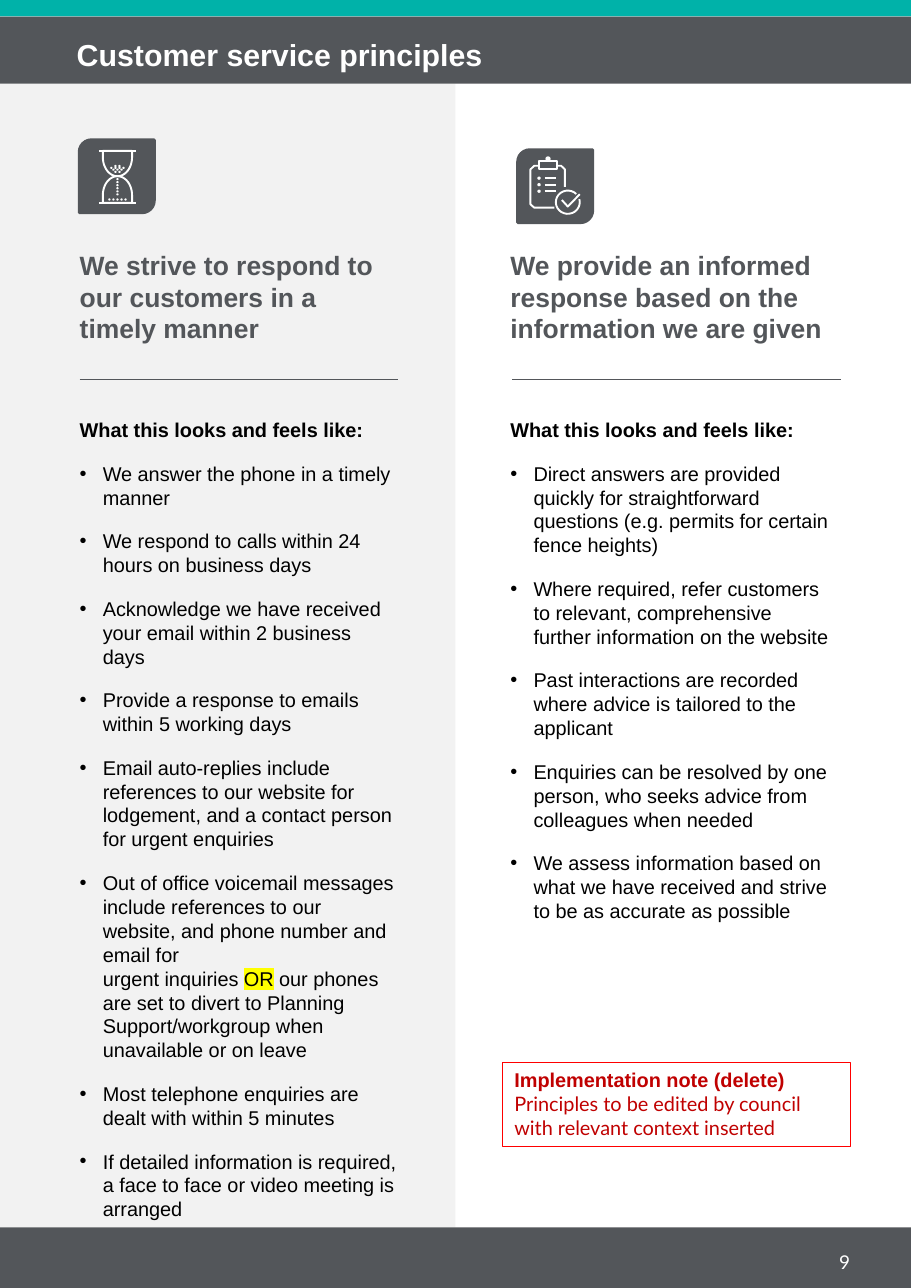
import math

import lxml.etree
import pptx
import pptx.dml.color
import pptx.enum.shapes
import pptx.enum.text
import pptx.oxml.ns
import pptx.util

SHAPE = pptx.enum.shapes.MSO_SHAPE
ALIGN = pptx.enum.text.PP_ALIGN
ANCHOR = pptx.enum.text.MSO_ANCHOR
COLOURS = {"slate": "53565A", "teal": "00B2A9", "pale": "F2F2F2", "white": "FFFFFF",
           "black": "000000", "red": "FF0000", "crimson": "C00000", "yellow": "FFFF00"}
FONTS = {
    "title": {"size": 19.8, "name": "Arial", "bold": True, "color": "white"},
    "heading": {"size": 17.3, "name": "Arial", "bold": True, "color": "slate"},
    "lead": {"size": 13, "name": "Arial", "bold": True, "color": "black"},
    "item": {"size": 13, "name": "Arial", "bold": False, "color": "black"},
    "note title": {"size": 13, "name": "Arial", "bold": True, "color": "crimson"},
    "note": {"size": 13, "name": "Lato", "bold": False, "color": "crimson"},
    "number": {"size": 12.4, "name": "Lato", "bold": False, "color": "white"},
}
HARD_SPACE = chr(160)
LEAD = "What this looks and feels like:"
TIMELY = [
    "We answer the phone in a timely manner",
    "We respond to calls within 24 hours on business days",
    "Acknowledge we have received your email within 2 business days",
    "Provide a response to emails within 5 working days",
    "Email auto-replies include references to our website for lodgement, and a contact person "
    "for urgent enquiries",
    "Out of office voicemail messages include references to our website, and phone number and "
    "email for urgent~inquiries~|OR|~our~phones are set to divert to~Planning "
    "Support/workgroup~when unavailable or on leave",
    "Most telephone enquiries are dealt with within 5 minutes",
    "If detailed information is required, a face to face or video meeting is arranged",
]
INFORMED = [
    "Direct answers are provided quickly for straightforward questions (e.g. permits for "
    "certain fence heights)",
    "Where required, refer customers to relevant, comprehensive further information on the website",
    "Past interactions are recorded where advice is tailored to the applicant",
    "Enquiries can be resolved by one person, who seeks advice from colleagues when needed",
    "We assess information based on what we have received and strive to be as accurate as possible",
]


def within(box, x, y, width=0, height=0):
    left, top, full_width, full_height = box
    return (round(left + full_width * x / 100), round(top + full_height * y / 100),
            round(full_width * width / 100), round(full_height * height / 100))


def colour(name):
    return pptx.dml.color.RGBColor.from_string(COLOURS[name])


def add_panel(shapes, kind, area, fill=None, line=None, weight=0.75):
    panel = shapes.add_shape(kind, *area)
    panel.shadow.inherit = False
    for target, name in ((panel.fill, fill), (panel.line.fill, line)):
        if name:
            target.solid()
            target.fore_color.rgb = colour(name)
        else:
            target.background()
    if line:
        panel.line.width = pptx.util.Pt(weight)
    return panel


def add_span(para, text, style):
    span = para.add_run()
    span.text = text
    for key, value in FONTS[style].items():
        if key == "color":
            span.font.color.rgb = colour(value)
        else:
            setattr(span.font, key, pptx.util.Pt(value) if key == "size" else value)
    return span


def highlight(span, name):
    mark = lxml.etree.Element(pptx.oxml.ns.qn("a:highlight"))
    lxml.etree.SubElement(mark, pptx.oxml.ns.qn("a:srgbClr"), val=COLOURS[name])
    span._r.get_or_add_rPr().find(pptx.oxml.ns.qn("a:solidFill")).addnext(mark)


def set_bullet(para, char=None):
    indent = pptx.util.Inches(0.21) if char else 0
    properties = para._p.get_or_add_pPr()
    properties.set("marL", str(indent))
    properties.set("indent", str(-indent))
    if char:
        lxml.etree.SubElement(properties, pptx.oxml.ns.qn("a:buChar"), char=char)
    else:
        lxml.etree.SubElement(properties, pptx.oxml.ns.qn("a:buNone"))


def set_frame(box, anchor=ANCHOR.TOP, side=0):
    frame = box.text_frame
    settings = {"word_wrap": True, "auto_size": pptx.enum.text.MSO_AUTO_SIZE.NONE,
                "vertical_anchor": anchor,
                "margin_left": pptx.util.Inches(side), "margin_right": pptx.util.Inches(side),
                "margin_top": pptx.util.Inches(0.05), "margin_bottom": pptx.util.Inches(0.05)}
    for key, value in settings.items():
        setattr(frame, key, value)
    return frame


def place_holder(page, index, area, anchor=ANCHOR.TOP):
    box = page.placeholders[index]
    for key, value in zip(("left", "top", "width", "height"), area):
        setattr(box, key, value)
    box.element.getparent().append(box.element)
    return set_frame(box, anchor)


def add_stroke(shapes, tile, points, closed=False):
    (start, *rest) = [within(tile, x, y)[:2] for x, y in points]
    builder = shapes.build_freeform(*start)
    builder.add_line_segments(rest, close=closed)
    stroke = builder.convert_to_shape()
    stroke.shadow.inherit = False
    stroke.fill.background()
    stroke.line.color.rgb = colour("white")
    stroke.line.width = pptx.util.Pt(1.25)


def arc(x, y, across, down, first, last, steps=24):
    angles = [math.radians(first + (last - first) * step / steps) for step in range(steps + 1)]
    return [(x + across * math.cos(angle), y + down * math.sin(angle)) for angle in angles]


def add_dot(shapes, tile, x, y, size):
    area = within(tile, x - size / 2, y - size / 2, size, size)
    add_panel(shapes, SHAPE.OVAL, area, "white")


def draw_hourglass(shapes, tile):
    for y in (15, 86.5):
        add_stroke(shapes, tile, [(26, y), (76, y)])
    add_stroke(shapes, tile, [(70.5, 15), *arc(51, 24, 19.5, 26, 0, 180), (31.5, 15)], True)
    add_stroke(shapes, tile, [(31.5, 86.5), *arc(51, 76, 19.5, 26, 180, 360), (70.5, 86.5)], True)
    rows = [(2, 36), (4, 38.5), (3, 41), (2, 44), (5, 82)]
    rows += [(1, 54 + 4.2 * step) for step in range(6)]
    for count, y in rows:
        for place in range(count):
            add_dot(shapes, tile, 51 + 5.4 * (place - (count - 1) / 2), y, 3)


def draw_clipboard(shapes, tile):
    add_stroke(shapes, tile, [(49, 79.5), (22, 79.5), (17, 75), (17, 27), (22, 22), (28, 22)])
    add_stroke(shapes, tile, [(53, 22), (58, 22), (63, 27), (63, 51)])
    add_stroke(shapes, tile, [(28, 15), (53, 15), (53, 26), (28, 26)], True)
    add_dot(shapes, tile, 40.5, 12.5, 7)
    for y in (39, 48, 57):
        add_dot(shapes, tile, 28.5, y, 4.5)
        add_stroke(shapes, tile, [(36, y), (51, y)])
    add_stroke(shapes, tile, arc(67, 72, 16, 16, -15, 315))
    add_stroke(shapes, tile, [(59, 69), (67, 78), (83, 61)])


def draw_header(page, box):
    add_panel(page.shapes, SHAPE.RECTANGLE, within(box, 0, 0, 100, 19.74), "teal")
    add_panel(page.shapes, SHAPE.RECTANGLE, within(box, 0, 19.74, 100, 80.26), "slate")
    frame = place_holder(page, 0, within(box, 8.42, 45.8, 83.43, 47.37), ANCHOR.MIDDLE)
    para = frame.paragraphs[0]
    para.alignment = ALIGN.LEFT
    para.line_spacing = 0.8
    add_span(para, "Customer service principles", "title")


def draw_footer(page, box):
    add_panel(page.shapes, SHAPE.RECTANGLE, box, "slate")
    number = page.shapes.add_textbox(*within(box, 87, 29, 7.5, 56))
    para = set_frame(number, side=0.1).paragraphs[0]
    para.alignment = ALIGN.RIGHT
    add_span(para, "9", "number")


def draw_principle(page, box, first_index, margin, icon, rule, heading, items):
    draw_icon, icon_left, icon_top = icon
    group = page.shapes.add_group_shape()
    tile = within(box, icon_left, icon_top, 16.44, 6.36)
    add_panel(group.shapes, SHAPE.ROUND_2_DIAG_RECTANGLE, tile, "slate", "slate", 2)
    draw_icon(group.shapes, tile)

    para = place_holder(page, first_index, within(box, margin, 13.97, 69.89, 9.34)).paragraphs[0]
    set_bullet(para)
    para.space_before = 0
    para.line_spacing = 1.0
    add_span(para, heading, "heading")

    left, top, width, _ = within(box, rule[0], 25.86, rule[1])
    line = page.shapes.add_connector(
        pptx.enum.shapes.MSO_CONNECTOR.STRAIGHT, left, top, left + width, top)
    line.line.color.rgb = colour("slate")
    line.line.width = pptx.util.Pt(0.75)
    lxml.etree.SubElement(line.element.spPr, pptx.oxml.ns.qn("a:effectLst"))

    frame = place_holder(page, first_index + 1, within(box, margin, 28.71, 69.89, 71.2))
    for place, text in enumerate([LEAD, *items]):
        para = frame.add_paragraph() if place else frame.paragraphs[0]
        set_bullet(para, "•" if place else None)
        para.space_before = pptx.util.Pt(12.9 if place else 0)
        para.line_spacing = 1.0
        for part, words in enumerate(text.replace("~", HARD_SPACE).split("|")):
            span = add_span(para, words, "item" if place else "lead")
            if part == 1:
                highlight(span, "yellow")


def draw_note(page, box):
    note = add_panel(page.shapes, SHAPE.RECTANGLE, box, line="red")
    frame = set_frame(note, side=0.11)
    lines = {"note title": "Implementation note (delete)",
             "note": "Principles to be edited by council with relevant context inserted"}
    for place, (style, text) in enumerate(lines.items()):
        para = frame.add_paragraph() if place else frame.paragraphs[0]
        para.alignment = ALIGN.LEFT
        add_span(para, text, style)


def main():
    deck = pptx.Presentation()
    deck.slide_width, deck.slide_height = pptx.util.Inches(8.27), pptx.util.Inches(11.69)
    page = deck.slides.add_slide(deck.slide_layouts[4])
    sheet = (0, 0, deck.slide_width, deck.slide_height)
    left, right = (within(sheet, x, 6.5, 50, 88.8) for x in (0, 50))
    add_panel(page.shapes, SHAPE.RECTANGLE, left, "pale")
    draw_header(page, within(sheet, 0, 0, 100, 6.5))
    draw_footer(page, within(sheet, 0, 95.3, 100, 4.7))
    draw_principle(page, left, 1, 17.5, (draw_hourglass, 17.41, 4.91), (17.5, 69.89),
                   "We strive to respond to our customers in a timely manner", TIMELY)
    draw_principle(page, right, 3, 12.05, (draw_clipboard, 13.66, 5.78), (12.5, 72.07),
                   "We provide an informed response based on the information we are given", INFORMED)
    draw_note(page, within(right, 10.28, 85.59, 76.42, 7.32))
    deck.save("out.pptx")


if __name__ == "__main__":
    main()
